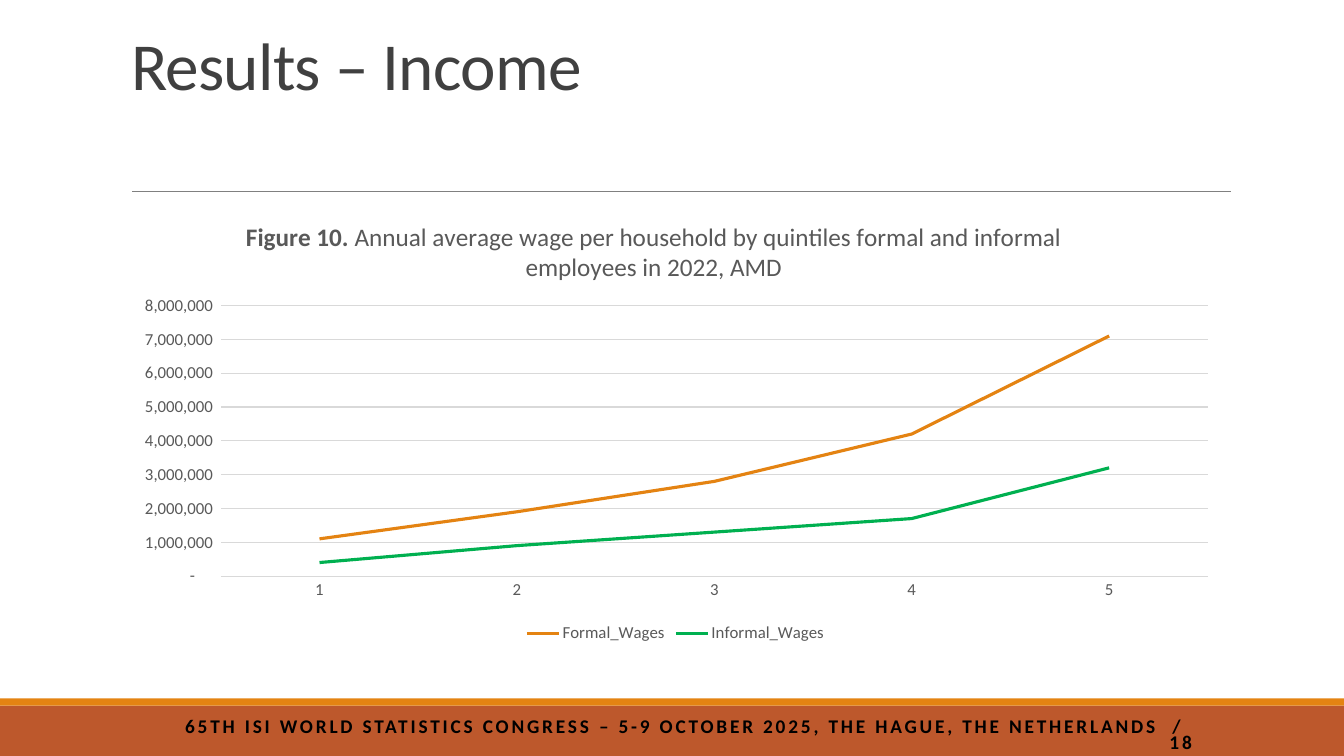
from lxml import etree
from pptx import Presentation
from pptx.chart.data import CategoryChartData
from pptx.dml.color import RGBColor
from pptx.enum.chart import XL_CHART_TYPE, XL_LEGEND_POSITION, XL_TICK_MARK
from pptx.enum.shapes import MSO_CONNECTOR, MSO_SHAPE
from pptx.enum.text import MSO_ANCHOR, MSO_AUTO_SIZE, PP_ALIGN
from pptx.oxml.ns import qn
from pptx.util import Inches, Pt

LINE = XL_CHART_TYPE.LINE
BOTTOM = XL_LEGEND_POSITION.BOTTOM
NO_TICK = XL_TICK_MARK.NONE
STRAIGHT = MSO_CONNECTOR.STRAIGHT
RECT = MSO_SHAPE.RECTANGLE
LEFT, RIGHT = PP_ALIGN.LEFT, PP_ALIGN.RIGHT
ANCHOR_TOP, ANCHOR_BOTTOM = MSO_ANCHOR.TOP, MSO_ANCHOR.BOTTOM
NO_AUTOFIT = MSO_AUTO_SIZE.NONE

ORANGE, RUST, GREEN = "E48312", "BD582C", "00B050"
GRAY, GRID = "595959", "D9D9D9"


def rgb(color):
    return RGBColor.from_string(color)


class Deck:
    font = "Calibri"

    def __init__(self):
        self.prs = Presentation()
        self.prs.slide_width = Inches(13.33)
        self.prs.slide_height = Inches(7.5)
        self.s = self.prs.slides.add_slide(self.prs.slide_layouts[5])

    def style(self, font, size, color, bold=False):
        font.name = self.font
        font.size = Pt(size)
        font.bold = bold
        font.color.rgb = rgb(color)

    def stroke(self, line, color, width):
        line.color.rgb = rgb(color)
        line.width = Pt(width)

    def bar(self, box, color):
        sp = self.s.shapes.add_shape(RECT, *map(Inches, box))
        sp.shadow.inherit = False
        sp.fill.solid()
        sp.fill.fore_color.rgb = rgb(color)
        sp.line.fill.background()

    def rule(self, x1, y1, x2, y2, color, width):
        cx = self.s.shapes.add_connector(STRAIGHT, *map(Inches, (x1, y1, x2, y2)))
        self.stroke(cx.line, color, width)
        etree.SubElement(cx._element.spPr, qn("a:effectLst"))

    def set_text(self, sp, text, size, color, bold, align, anchor, leading, tracking):
        tf = sp.text_frame
        tf.word_wrap = True
        tf.auto_size = NO_AUTOFIT
        tf.vertical_anchor = anchor
        p = tf.paragraphs[0]
        p.alignment = align
        p.line_spacing = leading
        self.style(p.font, size, color, bold)
        r = p.add_run()
        r.text = text
        r._r.get_or_add_rPr().set("spc", str(int(tracking * 100)))

    def title(self, box, text):
        sp = self.s.shapes.title
        sp.left, sp.top, sp.width, sp.height = map(Inches, box)
        self.set_text(sp, text, 48, "404040", False, LEFT, ANCHOR_BOTTOM, 0.85, -0.5)

    def footer(self, box, text):
        sp = self.s.shapes.add_textbox(*map(Inches, box))
        self.set_text(sp, text, 13.8, "000000", True, RIGHT, ANCHOR_TOP, 0.7, 2)

    def place(self, layout, **values):
        for child in list(layout):
            layout.remove(child)
        manual = etree.SubElement(layout, qn("c:manualLayout"))
        for tag, value in values.items():
            etree.SubElement(manual, qn(f"c:{tag}")).set("val", str(value))

    def chart_title(self, chart, label, text):
        title = chart.chart_title
        p = title.text_frame.paragraphs[0]
        for part, bold in ((label, True), (text, False)):
            r = p.add_run()
            r.text = part
            self.style(r.font, 18, GRAY, bold)
        title.include_in_layout = False
        layout = title._element.find(qn("c:layout"))
        if layout is None:
            layout = etree.Element(qn("c:layout"))
            title._element.find(qn("c:tx")).addnext(layout)
        self.place(layout, xMode="edge", yMode="edge", x=0.11, y=0.03)

    def line_chart(self, box, label, text, categories, series):
        data = CategoryChartData()
        data.categories = categories
        for name, values, _ in series:
            data.add_series(name, values)
        chart = self.s.shapes.add_chart(LINE, *map(Inches, box), data).chart
        self.style(chart.font, 12, GRAY)
        self.chart_title(chart, label, text)
        chart.has_legend = True
        chart.legend.position = BOTTOM
        chart.legend.include_in_layout = False

        for axis in (chart.category_axis, chart.value_axis):
            axis.major_tick_mark = axis.minor_tick_mark = NO_TICK
            self.style(axis.tick_labels.font, 12, GRAY)
        self.stroke(chart.category_axis.format.line, GRID, 0.75)
        value_axis = chart.value_axis
        value_axis.minimum_scale, value_axis.maximum_scale = 0, 8000000
        value_axis.major_unit = 1000000
        value_axis.format.line.fill.background()
        self.stroke(value_axis.major_gridlines.format.line, GRID, 0.75)
        labels = value_axis.tick_labels
        labels.number_format = r'_(* #,##0_);_(* \(#,##0\);_(* "-"??_);_(@_)'
        labels.number_format_is_linked = False

        plot = chart.plots[0]
        plot.vary_by_categories = False
        for line, (_, _, color) in zip(plot.series, series):
            line.smooth = False
            self.stroke(line.format.line, color, 2.25)
        area = chart._chartSpace.chart.plotArea
        layout = area.find(qn("c:layout"))
        if layout is None:
            layout = etree.Element(qn("c:layout"))
            area.insert(0, layout)
        self.place(layout, layoutTarget="inner", xMode="edge", yMode="edge",
                   x=0.09, y=0.23, w=0.89, h=0.61)


def main():
    deck = Deck()
    deck.bar((0, 7, 13.33, 0.5), RUST)
    deck.bar((0, 6.93, 13.33, 0.07), ORANGE)
    deck.rule(1.31, 1.9, 12.21, 1.9, "808080", 0.5)
    deck.title((1.2, 0.31, 11, 0.77), "Results – Income")
    deck.footer((1.55, 7.1, 10.37, 0.34),
                "65TH ISI WORLD STATISTICS CONGRESS – 5-9 OCTOBER 2025, "
                "THE HAGUE, THE NETHERLANDS  /  18")
    deck.line_chart(
        (1.2, 2.02, 11, 4.4),
        "Figure 10. ",
        "Annual average wage per household by quintiles formal and informal "
        "employees in 2022, AMD",
        ["1", "2", "3", "4", "5"],
        [("Formal_Wages", (1100000, 1900000, 2800000, 4200000, 7100000), ORANGE),
         ("Informal_Wages", (400000, 900000, 1300000, 1700000, 3200000), GREEN)],
    )
    deck.prs.save("out.pptx")


if __name__ == "__main__":
    main()
